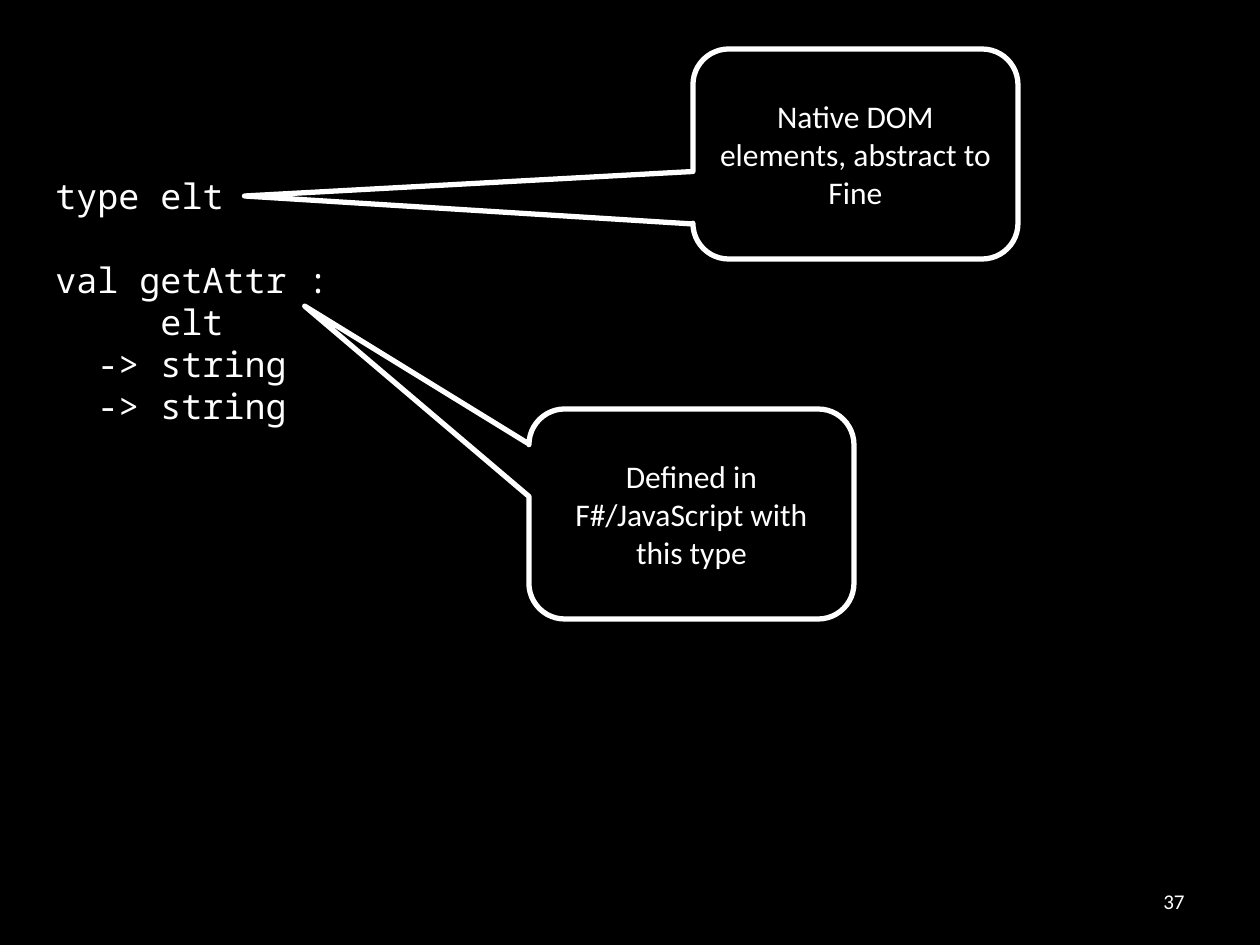
"""Build a dark slide of code lines with two callouts."""
import pptx
import pptx.dml.color
import pptx.enum.shapes
import pptx.enum.text
import pptx.util

PX_PER_INCH = 126
WHITE = "FFFFFF"
BLACK = "000000"
ALIGN = pptx.enum.text.PP_ALIGN
MIDDLE = pptx.enum.text.MSO_ANCHOR.MIDDLE
CODE_CHAR = 21
CODE_LINE = 42


def px(length):
    """Turn whole pixels into EMU."""
    return pptx.util.Emu(round(length * 914400 / PX_PER_INCH))


def color(value):
    """Turn a hex string into a colour."""
    return pptx.dml.color.RGBColor.from_string(value)


def apply(target, values):
    """Set each attribute of the target from a dict."""
    for name, value in values.items():
        setattr(target, name, value)


def write(para, text, size, font="Calibri"):
    """Add one white run to a paragraph."""
    span = para.add_run()
    span.text = text
    apply(span.font, {"size": pptx.util.Pt(size), "name": font})
    span.font.color.rgb = color(WHITE)


def add_callout(page, place, tail, text):
    """Add a rounded callout whose tail points at a code line."""
    box = page.shapes.add_shape(
        pptx.enum.shapes.MSO_SHAPE.ROUNDED_RECTANGULAR_CALLOUT, *map(px, place))
    for index, value in enumerate(tail):
        box.adjustments[index] = value
    box.shadow.inherit = False
    box.fill.solid()
    box.fill.fore_color.rgb = color(BLACK)
    box.line.color.rgb = color(WHITE)
    box.line.width = pptx.util.Pt(3)
    apply(box.text_frame, {"word_wrap": True, "vertical_anchor": MIDDLE})
    para = box.text_frame.paragraphs[0]
    para.alignment = ALIGN.CENTER
    write(para, text, 18)


def add_code(page, place, top_inset, lines):
    """Add code lines, each given as text, indent in characters and blank lines before."""
    box = page.shapes.add_textbox(*map(px, place))
    apply(box.text_frame, {"word_wrap": True, "margin_top": px(top_inset)})
    for index, (text, indent, gap) in enumerate(lines):
        para = box.text_frame.add_paragraph() if index else box.text_frame.paragraphs[0]
        apply(para, {"line_spacing": px(CODE_LINE), "space_before": px(gap * CODE_LINE)})
        para._p.get_or_add_pPr().set("marL", str(px(indent * CODE_CHAR)))
        write(para, text, 20, "Noto Sans Mono")


def add_page_number(page, place, text):
    """Add the page number at the lower right."""
    box = page.shapes.add_textbox(*map(px, place))
    apply(box.text_frame, {"word_wrap": True, "vertical_anchor": MIDDLE})
    para = box.text_frame.paragraphs[0]
    para.alignment = ALIGN.RIGHT
    write(para, text, 12)


def main():
    """Build and save the deck."""
    deck = pptx.Presentation()
    apply(deck, {"slide_width": px(1260), "slide_height": px(945)})
    page = deck.slides.add_slide(deck.slide_layouts[6])
    page.background.fill.solid()
    page.background.fill.fore_color.rgb = color(BLACK)
    add_page_number(page, (903, 876, 294, 50), "37")
    add_code(page, (43, 42, 1176, 394), 132, [
        ("type elt", 0, 0),
        ("val getAttr :", 0, 1),
        ("elt", 5, 0),
        ("-> string", 2, 0),
        ("-> string", 2, 0),
    ])
    add_callout(page, (693, 49, 325, 210), (-1.88, 0.2, 0.17),
                "Native DOM elements, abstract to Fine")
    add_callout(page, (529, 409, 325, 210), (-1.19, -0.99, 0.17),
                "Defined in F#/JavaScript with this type")
    deck.save("out.pptx")


if __name__ == "__main__":
    main()
